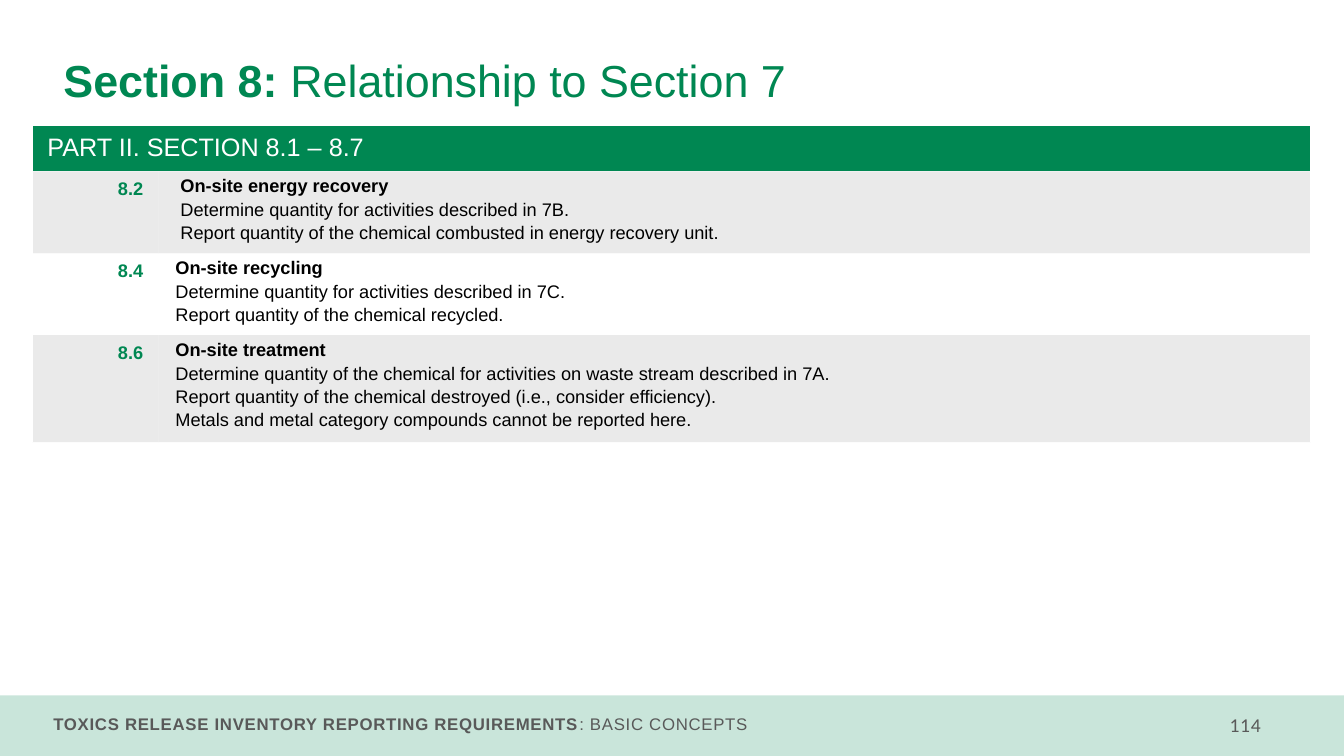
import pptx
import pptx.dml.color
import pptx.enum.shapes
import pptx.enum.text
import pptx.oxml
import pptx.oxml.ns
import pptx.util

ALIGN = pptx.enum.text.PP_ALIGN
ANCHOR = pptx.enum.text.MSO_ANCHOR
THEME = {
    "green": "008752", "grey": "D9D9D9", "white": "FFFFFF",
    "black": "000000", "footer": "595959",
    "title": 32, "header": 18, "body": 13, "foot": 12, "number": 14,
    "font": "Arial", "number_font": "Calibri",
}

prs = pptx.Presentation()
prs.slide_width = pptx.util.Inches(13.33)
prs.slide_height = pptx.util.Inches(7.5)
s = prs.slides.add_slide(prs.slide_layouts[6])

# Grid of 100 columns by 100 rows
COL, ROW = prs.slide_width / 100, prs.slide_height / 100


def write(p, text, size="body", color="black", bold=False, font="font", spacing=None):
    r = p.add_run()
    r.text = text
    r.font.size = pptx.util.Pt(THEME[size])
    r.font.name = THEME[font]
    r.font.bold = bold
    r.font.color.rgb = pptx.dml.color.RGBColor.from_string(THEME[color])
    if spacing:
        r.font._element.set("spc", str(spacing))


def paint(fill, color, opacity=100):
    fill.solid()
    fill.fore_color.rgb = pptx.dml.color.RGBColor.from_string(THEME[color])
    if opacity < 100:
        clr = fill._xPr.find(".//" + pptx.oxml.ns.qn("a:srgbClr"))
        clr.append(pptx.oxml.parse_xml(
            f'<a:alpha {pptx.oxml.ns.nsdecls("a")} val="{opacity * 1000}"/>'))


# Footer band
band = s.shapes.add_shape(pptx.enum.shapes.MSO_SHAPE.RECTANGLE,
                          0, int(92 * ROW), prs.slide_width, int(8 * ROW))
band.shadow.inherit = False
band.line.fill.background()
paint(band.fill, "green", 21)

# Title, footer and slide number
TITLE = dict(size="title", color="green")
FOOT = dict(size="foot", color="footer", spacing=50)
texts = [
    ((3.98, 5.6, 90.55, 10.8), ANCHOR.MIDDLE, ALIGN.LEFT, 0.9,
     [("Section 8: ", dict(TITLE, bold=True)), ("Relationship to Section 7", TITLE)]),
    ((3.23, 93.73, 70.5, 4), ANCHOR.TOP, ALIGN.LEFT, 1,
     [("TOXICS RELEASE INVENTORY REPORTING REQUIREMENTS", dict(FOOT, bold=True)),
      (": BASIC CONCEPTS", FOOT)]),
    ((84.55, 93.6, 10, 4.5), ANCHOR.TOP, ALIGN.RIGHT, 1,
     [("114", dict(FOOT, size="number", font="number_font"))]),
]
for (x, y, w, h), anchor, align, leading, runs in texts:
    tf = s.shapes.add_textbox(int(x * COL), int(y * ROW), int(w * COL), int(h * ROW)).text_frame
    tf.word_wrap = True
    tf.vertical_anchor = anchor
    p = tf.paragraphs[0]
    p.alignment = align
    p.line_spacing = leading
    for text, style in runs:
        write(p, text, **style)

# Table: number, text indent in inches, heading and details
sections = [
    ("8.2", 0.12, ["On-site energy recovery",
                   "Determine quantity for activities described in 7B.",
                   "Report quantity of the chemical combusted in energy recovery unit."]),
    ("8.4", 0.07, ["On-site recycling",
                   "Determine quantity for activities described in 7C.",
                   "Report quantity of the chemical recycled."]),
    ("8.6", 0.07, ["On-site treatment",
                   "Determine quantity of the chemical for activities on waste stream described in 7A.",
                   "Report quantity of the chemical destroyed (i.e., consider efficiency).",
                   "Metals and metal category compounds cannot be reported here."]),
]
heights = [5.87] + [0.8 + 3.2 * len(lines) for _, _, lines in sections]
table = s.shapes.add_table(len(heights), 2, int(2.4 * COL), int(16.53 * ROW),
                           int(95.12 * COL), int(sum(heights) * ROW)).table
table.first_row = table.horz_banding = False
style_id = table._tbl.tblPr.find(pptx.oxml.ns.qn("a:tableStyleId"))
style_id.text = "{2D5ABB26-0587-4C30-8999-92F81FD0307C}"
for column, width in zip(table.columns, (9.38, 85.74)):
    column.width = int(width * COL)
for row, height in zip(table.rows, heights):
    row.height = int(height * ROW)

# Header row
header = table.cell(0, 0)
header.merge(table.cell(0, 1))
header.vertical_anchor = ANCHOR.MIDDLE
paint(header.fill, "green")
write(header.text_frame.paragraphs[0], "PART II. SECTION 8.1 – 8.7", size="header", color="white")

# Section rows
for i, (number, indent, lines) in enumerate(sections, 1):
    label, detail = table.cell(i, 0), table.cell(i, 1)
    for cell in (label, detail):
        paint(cell.fill, *(("grey", 55) if i % 2 else ("white", 75)))
    p = label.text_frame.paragraphs[0]
    p.alignment = ALIGN.RIGHT
    write(p, number, color="green", bold=True)
    tf = detail.text_frame
    for j, line in enumerate(lines):
        p = tf.add_paragraph() if j else tf.paragraphs[0]
        p._p.get_or_add_pPr().set("marL", str(pptx.util.Inches(indent)))
        if j:
            p.space_before = pptx.util.Pt(2.2)
        write(p, line, bold=j == 0)

# Wide margins in the header and number cells
for i in range(len(heights)):
    cell = table.cell(i, 0)
    cell.margin_left = cell.margin_right = pptx.util.Inches(0.15)
    cell.margin_top = cell.margin_bottom = pptx.util.Inches(0.08)

# White outer borders
borders = [(header, ("lnL", "lnR", "lnT"))]
for i in range(1, len(heights)):
    borders += [(table.cell(i, 0), ("lnL",)), (table.cell(i, 1), ("lnR",))]
for cell, sides in borders:
    for k, side in enumerate(sides):
        cell._tc.get_or_add_tcPr().insert(k, pptx.oxml.parse_xml(
            f'<a:{side} {pptx.oxml.ns.nsdecls("a")} w="12700"><a:solidFill>'
            f'<a:srgbClr val="{THEME["white"]}"/></a:solidFill></a:{side}>'))

prs.save("out.pptx")
